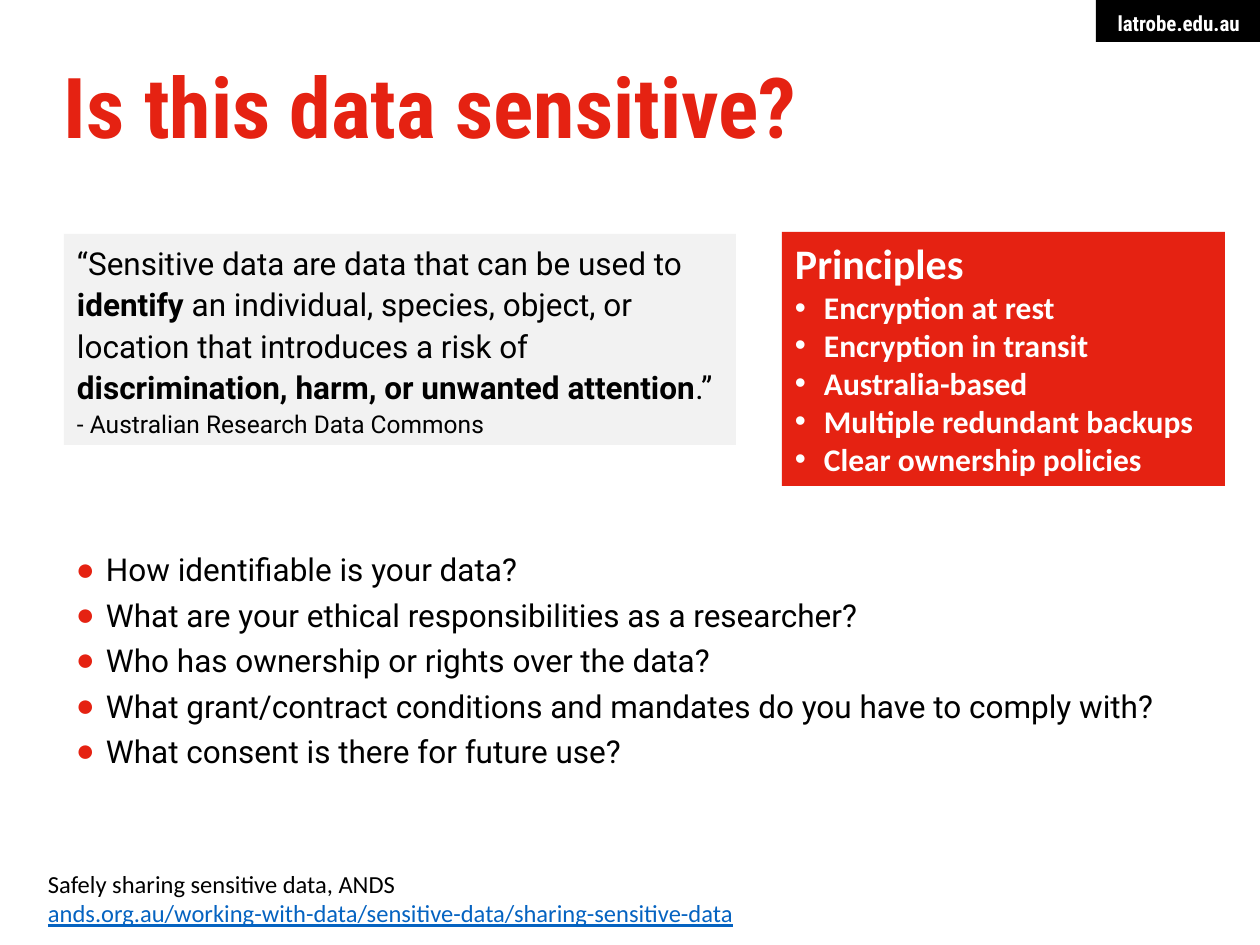
from dataclasses import dataclass

from lxml import etree
from pptx import Presentation
from pptx.dml.color import RGBColor
from pptx.enum.shapes import MSO_SHAPE
from pptx.enum.text import MSO_ANCHOR, PP_ALIGN
from pptx.oxml.ns import qn
from pptx.util import Emu, Pt

RECTANGLE = MSO_SHAPE.RECTANGLE
TOP = MSO_ANCHOR.TOP
LEFT, RIGHT = PP_ALIGN.LEFT, PP_ALIGN.RIGHT
EMU_PER_PX = 914400 / 126


@dataclass(frozen=True)
class Theme:
    red: str = "E52212"
    black: str = "000000"
    white: str = "FFFFFF"
    grey: str = "F2F2F2"
    link: str = "0563C1"
    heading_font: str = "Roboto Condensed"
    body_font: str = "Roboto"
    panel_font: str = "Calibri"
    title_size: int = 48
    panel_title_size: int = 24
    body_size: int = 18
    source_size: int = 14
    tag_size: int = 12


THEME = Theme()


@dataclass(frozen=True)
class Bullet:
    character: str
    color: str
    indent: int


@dataclass(frozen=True)
class Run:
    text: str
    bold: bool = False


@dataclass(frozen=True)
class Line:
    runs: tuple[Run, ...]
    font: str
    size: int
    color: str = THEME.black
    bold: bool = False
    underline: bool = False
    spacing: float | Pt = 1.0
    align: PP_ALIGN = LEFT
    bullet: Bullet | None = None


@dataclass(frozen=True)
class Box:
    left: int
    top: int
    width: int
    height: int
    lines: tuple[Line, ...]
    fill: str | None = None
    insets: tuple[int, int, int, int] = (13, 6, 13, 6)
    wrap: bool = True


def px(value: int) -> Emu:
    return Emu(round(value * EMU_PER_PX))


def add_bullet(paragraph, bullet: Bullet) -> None:
    properties = paragraph._p.get_or_add_pPr()
    properties.set("marL", str(px(bullet.indent)))
    properties.set("indent", str(-px(bullet.indent)))
    color = etree.SubElement(properties, qn("a:buClr"))
    etree.SubElement(color, qn("a:srgbClr"), val=bullet.color)
    etree.SubElement(properties, qn("a:buFont"), typeface="Arial")
    etree.SubElement(properties, qn("a:buChar"), char=bullet.character)


def write_line(paragraph, line: Line) -> None:
    paragraph.alignment = line.align
    paragraph.line_spacing = line.spacing
    if line.bullet:
        add_bullet(paragraph, line.bullet)
    font = paragraph.font
    font.name = line.font
    font.size = Pt(line.size)
    font.color.rgb = RGBColor.from_string(line.color)
    font.bold = line.bold
    font.underline = line.underline
    for part in line.runs:
        run = paragraph.add_run()
        run.text = part.text
        if part.bold:
            run.font.bold = True


def add_box(slide, box: Box) -> None:
    place = [px(value) for value in (box.left, box.top, box.width, box.height)]
    if box.fill:
        shape = slide.shapes.add_shape(RECTANGLE, *place)
        shape.shadow.inherit = False
        shape.fill.solid()
        shape.fill.fore_color.rgb = RGBColor.from_string(box.fill)
        shape.line.fill.background()
    else:
        shape = slide.shapes.add_textbox(*place)
    frame = shape.text_frame
    frame.word_wrap = box.wrap
    frame.vertical_anchor = TOP
    (frame.margin_left, frame.margin_top,
     frame.margin_right, frame.margin_bottom) = map(px, box.insets)
    for index, line in enumerate(box.lines):
        paragraph = frame.add_paragraph() if index else frame.paragraphs[0]
        write_line(paragraph, line)


def tag_box() -> Box:
    line = Line((Run("latrobe.edu.au"),), THEME.heading_font, THEME.tag_size,
                THEME.white, bold=True, align=RIGHT)
    return Box(1096, 0, 164, 42, (line,), THEME.black, (20, 10, 20, 6), wrap=False)


def title_box() -> Box:
    line = Line((Run("Is this data sensitive?"),), THEME.heading_font,
                THEME.title_size, THEME.red, bold=True, spacing=Pt(55))
    return Box(64, 59, 1131, 116, (line,), insets=(0, 0, 0, 0))


def questions_box() -> Box:
    questions = (
        "How identifiable is your data?",
        "What are your ethical responsibilities as a researcher?",
        "Who has ownership or rights over the data?",
        "What grant/contract conditions and mandates do you have to comply with?",
        "What consent is there for future use?",
    )
    bullet = Bullet("●", THEME.red, 30)
    lines = tuple(Line((Run(question),), THEME.body_font, THEME.body_size,
                       spacing=1.2, bullet=bullet) for question in questions)
    return Box(76, 543, 1184, 255, lines, insets=(0, 0, 0, 0))


def principles_box() -> Box:
    principles = (
        "Encryption at rest",
        "Encryption in transit",
        "Australia-based",
        "Multiple redundant backups",
        "Clear ownership policies",
    )
    bullet = Bullet("•", THEME.white, 29)
    heading = Line((Run("Principles"),), THEME.panel_font,
                   THEME.panel_title_size, THEME.white, bold=True)
    items = tuple(Line((Run(principle),), THEME.panel_font, THEME.body_size,
                       THEME.white, bold=True, bullet=bullet) for principle in principles)
    return Box(782, 232, 443, 254, (heading, *items), THEME.red)


def definition_box() -> Box:
    quote = (
        Run("“Sensitive data are data that can be used to "),
        Run("identify", bold=True),
        Run(" an individual, species, object, or location that introduces a risk of "),
        Run("discrimination, harm, or unwanted attention", bold=True),
        Run(".”"),
    )
    author = (Run("- Australian Research Data Commons"),)
    lines = (
        Line(quote, THEME.body_font, THEME.body_size, spacing=1.1),
        Line(author, THEME.body_font, THEME.source_size, spacing=1.1),
    )
    return Box(64, 234, 672, 211, lines, THEME.grey)


def source_box() -> Box:
    address = "ands.org.au/working-with-data/sensitive-data/sharing-sensitive-data"
    lines = (
        Line((Run("Safely sharing sensitive data, ANDS"),),
             THEME.panel_font, THEME.source_size),
        Line((Run(address),), THEME.panel_font, THEME.source_size,
             THEME.link, underline=True),
    )
    return Box(35, 863, 910, 72, lines)


def main() -> None:
    presentation = Presentation()
    presentation.slide_width = px(1260)
    presentation.slide_height = px(945)
    slide = presentation.slides.add_slide(presentation.slide_layouts[6])
    for box in (tag_box(), questions_box(), principles_box(),
                definition_box(), title_box(), source_box()):
        add_box(slide, box)
    presentation.save("out.pptx")


if __name__ == "__main__":
    main()
